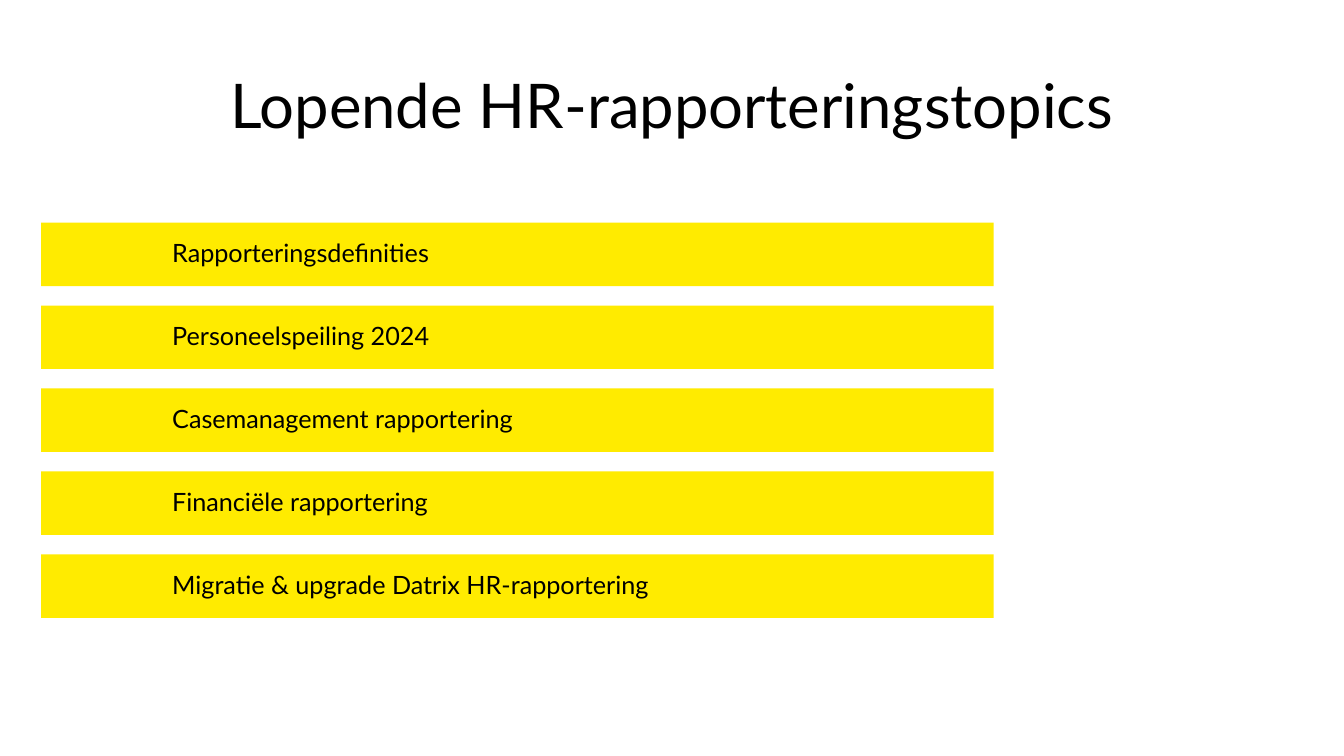
from pptx import Presentation
from pptx.dml.color import RGBColor
from pptx.enum.shapes import MSO_SHAPE as Shape
from pptx.enum.text import MSO_ANCHOR as Anchor, PP_ALIGN as Align
from pptx.util import Cm, Pt

FONT = "Lato"
BLACK = "000000"
YELLOW = "FFEB00"

LEFT = 1.04
TITLE_TOP, TITLE_WIDTH, TITLE_HEIGHT = 1.19, 31.8, 3.38
BAR_TOP, BAR_WIDTH, BAR_HEIGHT, BAR_PITCH = 5.61, 24, 1.6, 2.09

TOPICS = [
    "Rapporteringsdefinities",
    "Personeelspeiling 2024",
    "Casemanagement rapportering",
    "Financiële rapportering",
    "Migratie & upgrade Datrix HR-rapportering",
]


def color(hex_value):
    return RGBColor.from_string(hex_value)


def set_text(shape, text, size, align, line_spacing, insets):
    frame = shape.text_frame
    frame.word_wrap = True
    frame.vertical_anchor = Anchor.MIDDLE
    (frame.margin_left, frame.margin_top,
     frame.margin_right, frame.margin_bottom) = map(Cm, insets)
    paragraph = frame.paragraphs[0]
    paragraph.text = text
    paragraph.alignment = align
    paragraph.line_spacing = line_spacing
    paragraph.font.name = FONT
    paragraph.font.size = Pt(size)
    paragraph.font.color.rgb = color(BLACK)


def add_title(slide, text):
    title = slide.shapes.add_textbox(
        Cm(LEFT), Cm(TITLE_TOP), Cm(TITLE_WIDTH), Cm(TITLE_HEIGHT))
    set_text(title, text, 44, Align.CENTER, Pt(38), (0, 0, 0, 0))


def add_topic_bar(slide, top, topic):
    bar = slide.shapes.add_shape(
        Shape.RECTANGLE, Cm(LEFT), Cm(top), Cm(BAR_WIDTH), Cm(BAR_HEIGHT))
    bar.shadow.inherit = False
    bar.fill.solid()
    bar.fill.fore_color.rgb = color(YELLOW)
    bar.line.fill.background()
    set_text(bar, topic, 18, Align.LEFT, 0.9, (3.3, 0.1, 0.5, 0.1))


def main():
    deck = Presentation()
    deck.slide_width, deck.slide_height = Cm(33.87), Cm(19.05)
    slide = deck.slides.add_slide(deck.slide_layouts[6])

    # Heading
    add_title(slide, "Lopende HR-rapporteringstopics")

    # One bar per topic, evenly spaced
    for row, topic in enumerate(TOPICS):
        add_topic_bar(slide, BAR_TOP + row * BAR_PITCH, topic)

    deck.save("out.pptx")


if __name__ == "__main__":
    main()
